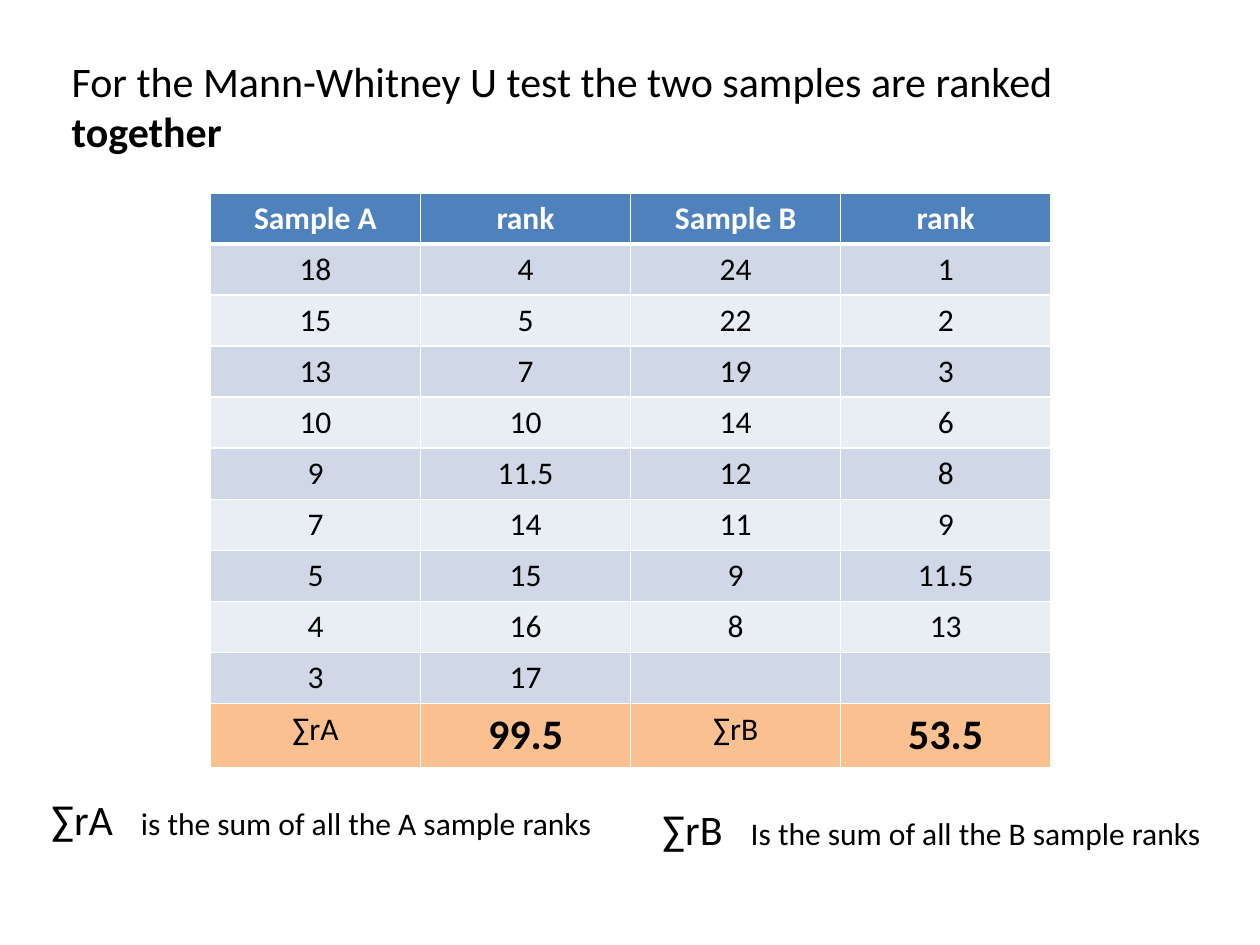
from dataclasses import dataclass

import pptx
import pptx.dml.color
import pptx.enum.text
import pptx.oxml
import pptx.oxml.ns
import pptx.util

Inches = pptx.util.Inches
Pt = pptx.util.Pt
RGBColor = pptx.dml.color.RGBColor

BLACK = RGBColor(0x00, 0x00, 0x00)
WHITE = RGBColor(0xFF, 0xFF, 0xFF)
HEADER_BLUE = RGBColor(0x4F, 0x81, 0xBD)
BAND_DARK = RGBColor(0xD0, 0xD8, 0xE8)
BAND_LIGHT = RGBColor(0xE9, 0xED, 0xF4)
TOTAL_ORANGE = RGBColor(0xFA, 0xC0, 0x90)
FONT = "Calibri"

HEADERS = ("Sample A", "rank", "Sample B", "rank")
RANKS = (
    ("18", "4", "24", "1"),
    ("15", "5", "22", "2"),
    ("13", "7", "19", "3"),
    ("10", "10", "14", "6"),
    ("9", "11.5", "12", "8"),
    ("7", "14", "11", "9"),
    ("5", "15", "9", "11.5"),
    ("4", "16", "8", "13"),
    ("3", "17", "", ""),
)
TOTALS = ("∑rA", "99.5", "∑rB", "53.5")


@dataclass(frozen=True)
class Span:
    text: str
    size: int
    bold: bool = False
    color: RGBColor = BLACK


@dataclass(frozen=True)
class Label:
    left: float
    top: float
    width: float
    height: float
    spans: tuple[Span, ...]
    wrap: bool = False


LABELS = (
    Label(0.47, 0.39, 8.98, 0.91, (
        Span("For the Mann-Whitney U test the two samples are ranked ", 24),
        Span("together", 24, bold=True),
    ), wrap=True),
    Label(0.31, 6.25, 0.7, 0.5, (Span("∑rA", 24),)),
    Label(1.02, 6.33, 3.91, 0.4, (Span("is the sum of all the A sample ranks", 18),), wrap=True),
    Label(5.86, 6.41, 3.82, 0.4, (Span("Is the sum of all the B sample ranks", 18),)),
    Label(5.16, 6.33, 0.76, 0.5, (Span("∑rB", 24),)),
)


def add_span(para, span: Span) -> None:
    run = para.add_run()
    run.text = span.text
    formats = {"name": FONT, "size": Pt(span.size), "bold": span.bold}
    for name, value in formats.items():
        setattr(run.font, name, value)
    run.font.color.rgb = span.color


def add_label(page, label: Label) -> None:
    box = page.shapes.add_textbox(
        Inches(label.left), Inches(label.top), Inches(label.width), Inches(label.height)
    )
    formats = {
        "word_wrap": label.wrap,
        "auto_size": pptx.enum.text.MSO_AUTO_SIZE.SHAPE_TO_FIT_TEXT,
    }
    for name, value in formats.items():
        setattr(box.text_frame, name, value)
    for span in label.spans:
        add_span(box.text_frame.paragraphs[0], span)


def add_borders(cell, top: int, bottom: int) -> None:
    properties = cell._tc.get_or_add_tcPr()
    for side, width in {"L": 1, "R": 1, "T": top, "B": bottom}.items():
        properties.append(pptx.oxml.parse_xml(
            f'<a:ln{side} {pptx.oxml.ns.nsdecls("a")} w="{Pt(width)}">'
            f'<a:solidFill><a:srgbClr val="{WHITE}"/></a:solidFill></a:ln{side}>'
        ))


def fill_cell(cell, span: Span, fill: RGBColor, top: int, bottom: int) -> None:
    add_borders(cell, top, bottom)
    cell.fill.solid()
    cell.fill.fore_color.rgb = fill
    para = cell.text_frame.paragraphs[0]
    para.alignment = pptx.enum.text.PP_ALIGN.CENTER
    if span.text:
        add_span(para, span)


def add_rank_table(page) -> None:
    rows = (HEADERS, *RANKS, TOTALS)
    table = page.shapes.add_table(
        len(rows), len(HEADERS), Inches(1.67), Inches(1.53), Inches(6.67), Inches(4.46)
    ).table
    table.horz_banding = False
    table.first_row = True
    last = len(rows) - 1
    table.rows[last].height = Inches(0.5)
    for row, texts in enumerate(rows):
        for column, text in enumerate(texts):
            if row == 0:
                span, fill = Span(text, 18, True, WHITE), HEADER_BLUE
            elif row == last:
                is_sum = column % 2 == 1
                span, fill = Span(text, 24 if is_sum else 18, is_sum), TOTAL_ORANGE
            else:
                span, fill = Span(text, 18), BAND_DARK if row % 2 else BAND_LIGHT
            top = 3 if row == 1 else 1
            bottom = 3 if row == 0 else 1
            fill_cell(table.cell(row, column), span, fill, top, bottom)


def main() -> None:
    deck = pptx.Presentation()
    deck.slide_width = Inches(10)
    deck.slide_height = Inches(7.5)
    page = deck.slides.add_slide(deck.slide_layouts[6])
    add_rank_table(page)
    for label in LABELS:
        add_label(page, label)
    deck.save("out.pptx")


if __name__ == "__main__":
    main()
